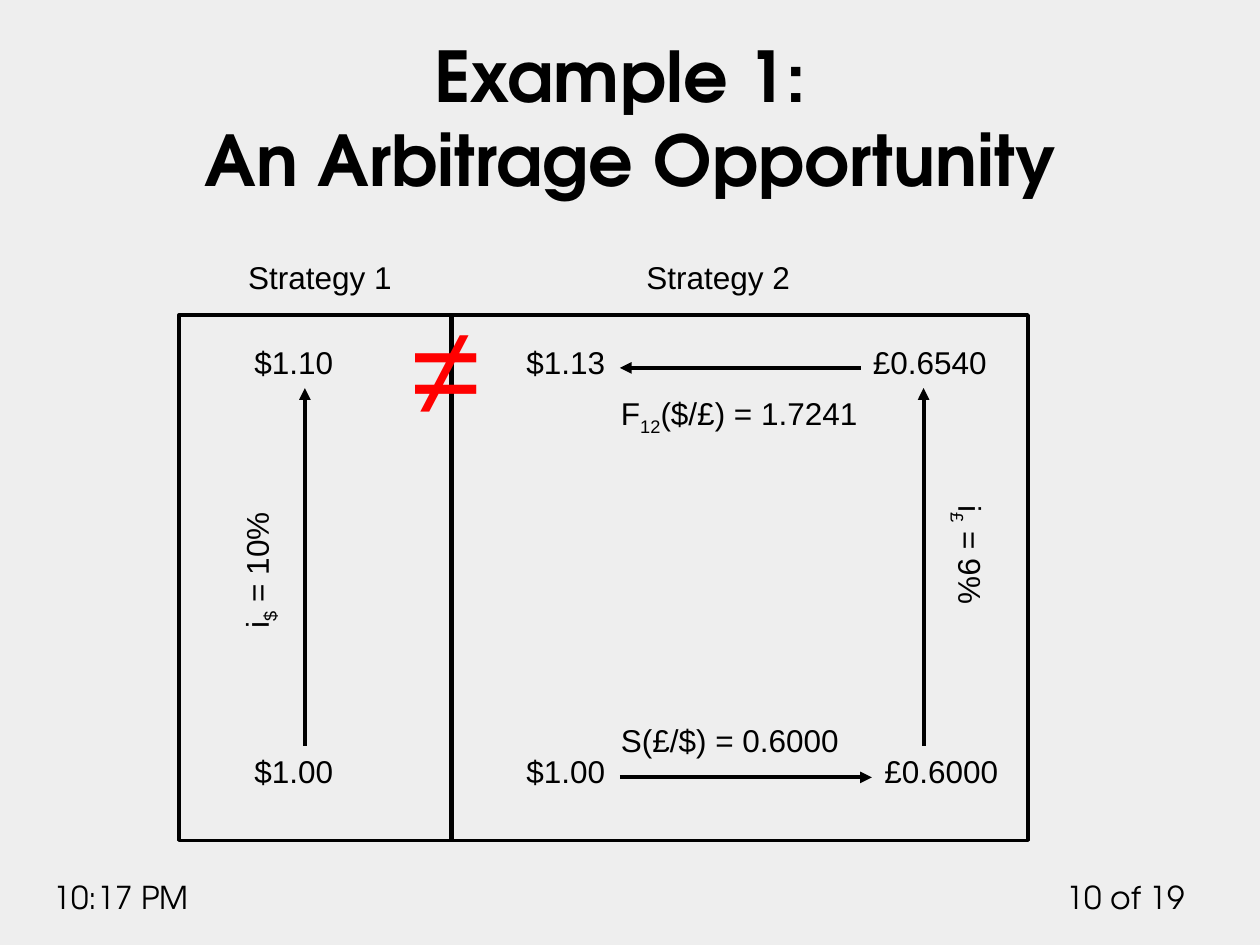
from lxml import etree
from pptx import Presentation
from pptx.dml.color import RGBColor
from pptx.enum.shapes import MSO_CONNECTOR, MSO_SHAPE
from pptx.enum.text import MSO_ANCHOR, PP_ALIGN
from pptx.oxml.ns import qn
from pptx.util import Inches, Pt

RECTANGLE = MSO_SHAPE.RECTANGLE
STRAIGHT = MSO_CONNECTOR.STRAIGHT
BOTTOM = MSO_ANCHOR.BOTTOM
LEFT, CENTER, RIGHT = PP_ALIGN.LEFT, PP_ALIGN.CENTER, PP_ALIGN.RIGHT

COLORS = {"background": "EEEEEE", "ink": "000000", "alert": "FF0000"}
HEADING_FONT = "TeX Gyre Adventor"
BODY_FONT = "Arial"
LABEL_HEIGHT = 0.4


def color(key):
    return RGBColor.from_string(COLORS[key])


def format_run(run, size=18, font=BODY_FONT, ink="ink", bold=False):
    run.font.size = Pt(size)
    run.font.name = font
    run.font.bold = bold
    run.font.color.rgb = color(ink)


def add_label(slide, left, top, width, text, subscript="", rest="", height=LABEL_HEIGHT,
              align=LEFT, rotation=0, **style):
    label = slide.shapes.add_textbox(Inches(left), Inches(top), Inches(width), Inches(height))
    label.rotation = rotation
    label.text_frame.word_wrap = True
    paragraph = label.text_frame.paragraphs[0]
    paragraph.alignment = align
    for part in filter(None, (text, subscript, rest)):
        run = paragraph.add_run()
        run.text = part
        format_run(run, **style)
        if part == subscript:
            run.font._element.set("baseline", "-25000")


def add_arrow(slide, start, end):
    arrow = slide.shapes.add_connector(STRAIGHT, *map(Inches, start + end))
    arrow.line.color.rgb = color("ink")
    arrow.line.width = Pt(2.25)
    tail = etree.SubElement(arrow.line._get_or_add_ln(), qn("a:tailEnd"))
    tail.set("type", "triangle")
    etree.SubElement(arrow._element.spPr, qn("a:effectLst"))


def add_frame(slide, left, top, width, height):
    frame = slide.shapes.add_shape(RECTANGLE, *map(Inches, (left, top, width, height)))
    frame.shadow.inherit = False
    frame.fill.background()
    frame.line.color.rgb = color("ink")
    frame.line.width = Pt(2)


def add_title(slide, left, top, width, height):
    title = slide.shapes.title
    title.left, title.top, title.width, title.height = map(Inches, (left, top, width, height))
    title.text_frame.text = "Example 1: \vAn Arbitrage Opportunity"
    title.text_frame.vertical_anchor = BOTTOM
    paragraph = title.text_frame.paragraphs[0]
    paragraph.alignment = CENTER
    for run in paragraph.runs:
        format_run(run, 40, HEADING_FONT, bold=True)


def add_strategy(slide, left, top, width, height, name, name_offset, start_value, end_value,
                 growth_offset):
    add_frame(slide, left, top, width, height)
    add_label(slide, left + name_offset, top - 0.5, 1.5, name, align=CENTER)
    add_label(slide, left + 0.5, top + 0.17, 1, end_value)
    add_label(slide, left + 0.5, top + height - 0.75, 1, start_value)
    growth_x = left + growth_offset
    add_arrow(slide, (growth_x, top + height - 0.75), (growth_x, top + 0.58))


def add_dollar_strategy(slide, left, top, width, height):
    add_strategy(slide, left, top, width, height, "Strategy 1", 0.37, "$1.00", "$1.10", 1)
    add_label(slide, left - 0.01, top + 1.76, 1.25, "i", "$", " = 10%", rotation=270)


def add_pound_strategy(slide, left, top, width, height):
    add_strategy(slide, left, top, width, height, "Strategy 2", 1.37, "$1.00", "$1.13", 3.75)
    bottom = top + height
    add_label(slide, left + 3.25, top + 0.17, 1.17, "£0.6540")
    add_label(slide, left + 3.34, bottom - 0.75, 1.17, "£0.6000")
    add_arrow(slide, (left + 1.34, bottom - 0.5), (left + 3.34, bottom - 0.5))
    add_arrow(slide, (left + 3.25, top + 0.42), (left + 1.34, top + 0.42))
    add_label(slide, left + 1.25, bottom - 1, 2.17, "S(£/$) = 0.6000")
    add_label(slide, left + 1.25, top + 0.58, 2.17, "F", "12", "($/£) = 1.7241")
    add_label(slide, left + 3.5, top + 1.84, 1.25, "i", "£", " = 9%", rotation=90)


def add_footer(slide, left, top, width):
    time_width, page_width = 1.58, 1.17
    add_label(slide, left, top, time_width, "10:17 PM", font=HEADING_FONT)
    add_label(slide, left + width - page_width, top, page_width, "10 of 19",
              align=RIGHT, font=HEADING_FONT)


def main():
    presentation = Presentation()
    presentation.slide_width = Inches(10)
    presentation.slide_height = Inches(7.5)
    slide = presentation.slides.add_slide(presentation.slide_layouts[5])
    slide.background.fill.solid()
    slide.background.fill.fore_color.rgb = color("background")

    add_title(slide, 0.5, 0.39, 9, 1.25)
    add_dollar_strategy(slide, 1.42, 2.5, 2.17, 4.17)
    add_pound_strategy(slide, 3.58, 2.5, 4.58, 4.17)
    add_label(slide, 3.17, 2.25, 1.25, "≠", height=1.31, size=72, ink="alert")
    add_footer(slide, 0.33, 6.92, 9.17)
    presentation.save("out.pptx")


if __name__ == "__main__":
    main()
